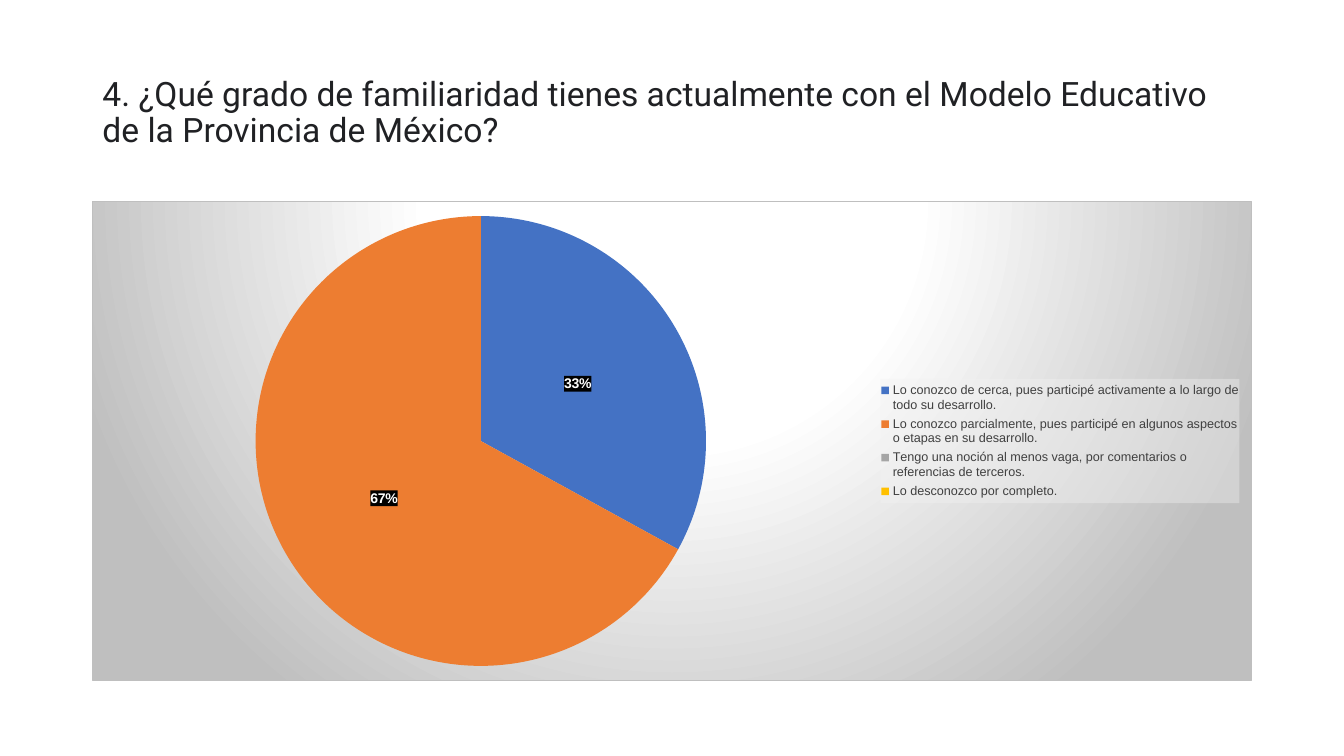
import pptx
import pptx.chart.data
import pptx.dml.color
import pptx.enum.chart
import pptx.enum.text
import pptx.oxml
import pptx.oxml.ns
import pptx.util

Pt = pptx.util.Pt
qn = pptx.oxml.ns.qn

COLORS = {
    "title": "202124", "legend": "404040", "label": "FFFFFF", "label_bg": "000000",
    "light": "FFFFFF", "edge": "BFBFBF", "legend_bg": "F2F2F2",
}
ANSWERS = [
    ("Lo conozco de cerca, pues participé activamente a lo largo de todo su desarrollo.",
     33, "4472C4"),
    ("Lo conozco parcialmente, pues participé en algunos aspectos o etapas en su desarrollo.",
     67, "ED7D31"),
    ("Tengo una noción al menos vaga, por comentarios o referencias de terceros.",
     0, "A5A5A5"),
    ("Lo desconozco por completo.", 0, "FFC000"),
]
NS = pptx.oxml.ns.nsdecls("c", "a")


def rgb(value):
    return pptx.dml.color.RGBColor.from_string(value)


def style_font(font, name, size, color, bold=False):
    font.name, font.size, font.bold = name, Pt(size), bold
    font.color.rgb = rgb(color)


def chart_props(inner):
    return pptx.oxml.parse_xml(f"<c:spPr {NS}>{inner}</c:spPr>")


def translucent(color, opacity):
    return chart_props(f'<a:solidFill><a:srgbClr val="{color}">'
                       f'<a:alpha val="{opacity * 1000}"/></a:srgbClr></a:solidFill>')


def set_layout(parent, index, box, target=""):
    """Place a chart part by fractions of the chart: x, y, width, height."""
    for old in parent.findall(qn("c:layout")):
        parent.remove(old)
    modes = '<c:xMode val="edge"/><c:yMode val="edge"/>'
    sizes = "".join(f'<c:{k} val="{v}"/>' for k, v in zip("xywh", box))
    parent.insert(index, pptx.oxml.parse_xml(
        f"<c:layout {NS}><c:manualLayout>{target}{modes}{sizes}"
        "</c:manualLayout></c:layout>"))


def add_title(slide, text, left, top, width, height):
    sp = slide.shapes.title
    sp.left, sp.top, sp.width, sp.height = Pt(left), Pt(top), Pt(width), Pt(height)
    tf = sp.text_frame
    tf.text = text
    tf.word_wrap = True
    tf.auto_size = pptx.enum.text.MSO_AUTO_SIZE.NONE
    tf.vertical_anchor = pptx.enum.text.MSO_ANCHOR.MIDDLE
    p = tf.paragraphs[0]
    p.alignment = pptx.enum.text.PP_ALIGN.LEFT
    p.line_spacing = 0.9
    style_font(p.font, "Roboto", 24, COLORS["title"])


def style_background(chart):
    stops = [(0, COLORS["light"]), (39, COLORS["light"]), (100, COLORS["edge"])]
    gs = "".join(f'<a:gs pos="{pos * 1000}"><a:srgbClr val="{c}"/></a:gs>'
                 for pos, c in stops)
    chart._chartSpace.find(qn("c:chart")).addnext(chart_props(
        f'<a:gradFill><a:gsLst>{gs}</a:gsLst><a:path path="circle">'
        '<a:fillToRect l="50000" t="-80000" r="50000" b="180000"/></a:path></a:gradFill>'
        f'<a:ln w="{Pt(0.75)}"><a:solidFill><a:srgbClr val="{COLORS["edge"]}"/>'
        "</a:solidFill></a:ln>"))


def style_legend(chart):
    chart.has_legend = True
    legend = chart.legend
    legend.position = pptx.enum.chart.XL_LEGEND_POSITION.RIGHT
    legend.include_in_layout = False
    style_font(legend.font, "Arial", 9, COLORS["legend"])
    el = legend._element
    set_layout(el, 1, (0.68, 0.37, 0.31, 0.26))
    el.find(qn("c:txPr")).addprevious(translucent(COLORS["legend_bg"], 39))


def style_slices(plot):
    plot.vary_by_categories = True
    series = plot.series[0]
    labels = series.data_labels
    labels.show_percentage = True
    labels.show_value = False
    labels.number_format, labels.number_format_is_linked = "0%", False
    labels.position = pptx.enum.chart.XL_LABEL_POSITION.CENTER
    style_font(labels.font, "Arial", 10, COLORS["label"], bold=True)
    el = labels._element
    el.find(qn("c:txPr")).addprevious(translucent(COLORS["label_bg"], 75))
    hidden = 0
    for i, (_, value, color) in enumerate(ANSWERS):
        fill = series.points[i].format.fill
        fill.solid()
        fill.fore_color.rgb = rgb(color)
        if value == 0:
            el.insert(hidden, pptx.oxml.parse_xml(
                f'<c:dLbl {NS}><c:idx val="{i}"/><c:delete val="1"/></c:dLbl>'))
            hidden += 1


def add_pie(slide, left, top, width, height):
    data = pptx.chart.data.CategoryChartData()
    data.categories = [answer for answer, _, _ in ANSWERS]
    data.add_series("Series 1", [value for _, value, _ in ANSWERS])
    chart = slide.shapes.add_chart(pptx.enum.chart.XL_CHART_TYPE.PIE, Pt(left), Pt(top),
                                   Pt(width), Pt(height), data).chart
    chart.has_title = False
    chart.font.name, chart.font.size = "Arial", Pt(10)
    style_background(chart)
    style_legend(chart)
    style_slices(chart.plots[0])
    plot_area = chart._chartSpace.find(".//" + qn("c:plotArea"))
    set_layout(plot_area, 0, (0.14, 0.03, 0.39, 0.94), '<c:layoutTarget val="inner"/>')


def main():
    prs = pptx.Presentation()
    prs.slide_width, prs.slide_height = Pt(960), Pt(540)
    slide = prs.slides.add_slide(prs.slide_layouts[5])
    add_title(slide, "4. ¿Qué grado de familiaridad tienes actualmente con el Modelo "
              "Educativo de la Provincia de México?", 66, 28.75, 828, 104.4)
    add_pie(slide, 66, 143.75, 828, 342.6)
    prs.save("out.pptx")


if __name__ == "__main__":
    main()
